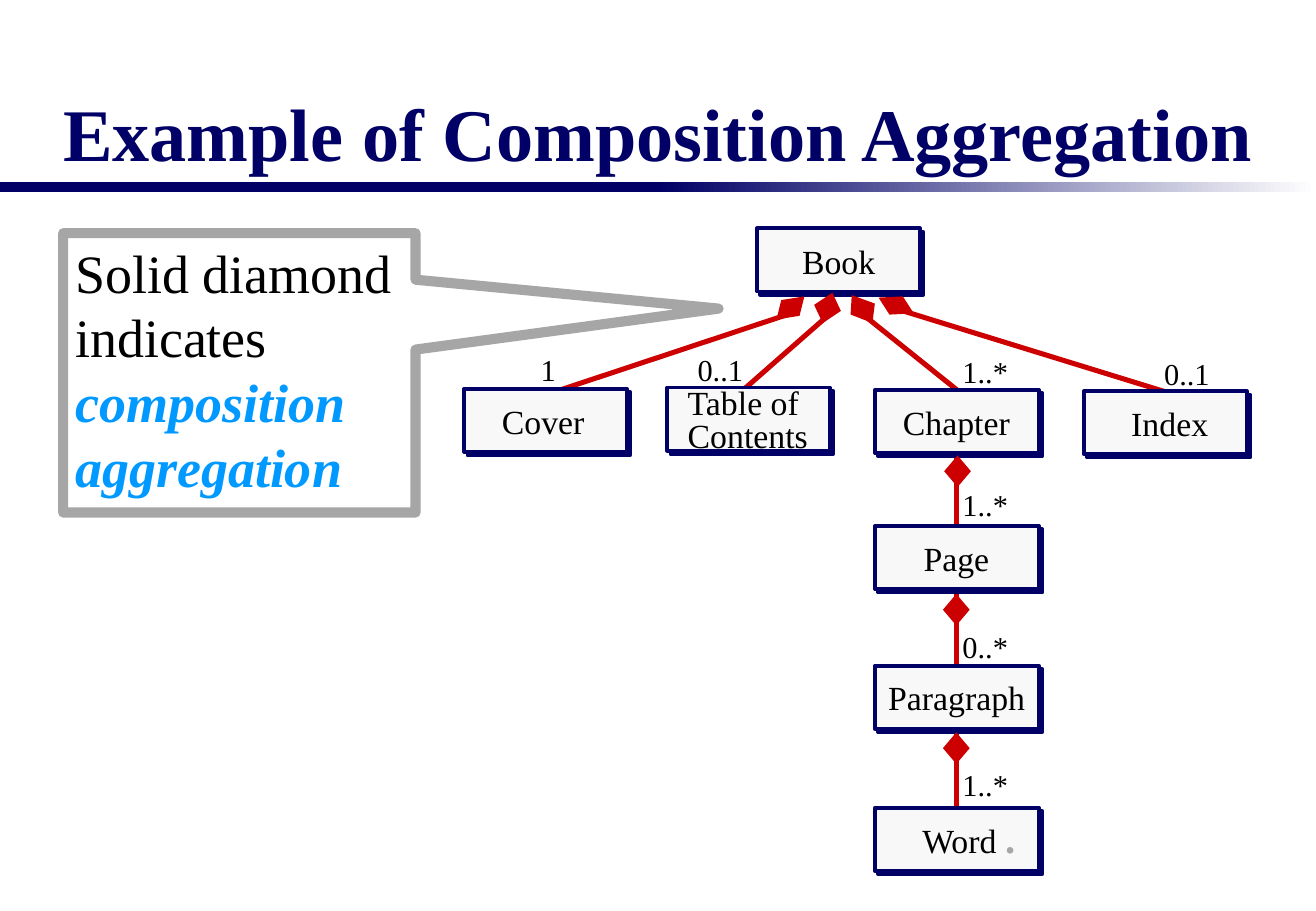
from lxml import etree
from pptx import Presentation, util as u
from pptx.dml.color import RGBColor
from pptx.enum import shapes, text
from pptx.oxml.ns import qn

PX = 9144  # 100 px to the inch
NAVY = RGBColor(0x00, 0x00, 0x66)
RED = RGBColor(0xCC, 0x00, 0x00)
PALE = RGBColor(0xF8, 0xF8, 0xF8)
GREY = RGBColor(0xA6, 0xA6, 0xA6)
SKY = RGBColor(0x00, 0x99, 0xFF)
WHITE = RGBColor(0xFF, 0xFF, 0xFF)
BLACK = RGBColor(0x00, 0x00, 0x00)
BOX_H = 52

prs = Presentation()
prs.slide_width, prs.slide_height = 1083 * PX, 750 * PX
s = prs.slides.add_slide(prs.slide_layouts[6])


def add_text(p, words, size=20, color=BLACK, bold=False, italic=False):
    r = p.add_run()
    r.text = words
    f = r.font
    f.name, f.size, f.bold, f.italic = "Times New Roman", u.Pt(size), bold, italic
    f.color.rgb = color


def add_frame(x, y, w, h):
    """Add an unwrapped text box without margins and return its first paragraph."""
    tf = s.shapes.add_textbox(x * PX, y * PX, w * PX, h * PX).text_frame
    tf.margin_left = tf.margin_right = tf.margin_top = tf.margin_bottom = 0
    tf.word_wrap = False
    return tf.paragraphs[0]


# Title and the rule below it
p = add_frame(52, 34, 990, 111)
p.alignment = text.PP_ALIGN.LEFT
add_text(p, "Example of Composition Aggregation", size=44, color=NAVY, bold=True)
s.shapes[-1].text_frame.vertical_anchor = text.MSO_ANCHOR.BOTTOM

for x in (0, 541):
    sp = s.shapes.add_shape(shapes.MSO_SHAPE.RECTANGLE, x * PX, 150 * PX, 542 * PX, 8 * PX)
    sp.shadow.inherit = False
    sp.line.fill.background()
    if x == 0:
        sp.fill.solid()
        sp.fill.fore_color.rgb = NAVY
    else:
        sp.fill.gradient()
        sp.fill.gradient_angle = 0
        for stop, position, color in zip(sp.fill.gradient_stops, (0, 1), (NAVY, WHITE)):
            stop.position, stop.color.rgb = position, color

# Callout
sp = s.shapes.add_shape(shapes.MSO_SHAPE.RECTANGULAR_CALLOUT, 52 * PX, 192 * PX, 290 * PX, 230 * PX)
sp.adjustments[0], sp.adjustments[1] = 1.36, -0.23
sp.shadow.inherit = False
sp.fill.background()
sp.line.color.rgb, sp.line.width = GREY, u.Pt(6)
tf = sp.text_frame
tf.word_wrap, tf.vertical_anchor = True, text.MSO_ANCHOR.TOP
p = tf.paragraphs[0]
p.alignment = text.PP_ALIGN.LEFT
add_text(p, "Solid diamond indicates ", size=32)
add_text(p, "composition aggregation", size=32, color=SKY, bold=True, italic=True)

# name: box (left, top, width), label (left, top, width)
classes = {
    "Book": ((623, 188, 134), (660, 198, 61)),
    "Cover": ((382, 320, 134), (413, 330, 69)),
    "Table of\vContents": ((549, 319, 134), (566, 321, 100)),
    "Chapter": ((720, 321, 135), (743, 331, 89)),
    "Index": ((892, 322, 134), (931, 332, 64)),
    "Page": ((720, 433, 135), (760, 443, 55)),
    "Paragraph": ((720, 548, 135), (731, 557, 114)),
    "Word": ((720, 665, 135), (759, 669, 77)),
}

# part, multiplicity and its place, line, diamond corners
links = [
    ("Cover", "1", (445, 289), (648, 259, 425, 333), [(662, 244), (643, 247), (639, 263), (658, 260)]),
    ("Table of\vContents", "0..1", (574, 289), (680, 261, 598, 333),
     [(685, 241), (670, 251), (677, 266), (692, 256)]),
    ("Chapter", "1..*", (792, 291), (714, 262, 787, 321), [(701, 243), (700, 259), (718, 266), (720, 250)]),
    ("Index", "0..1", (958, 292), (740, 255, 967, 325), [(723, 245), (732, 259), (752, 258), (743, 244)]),
]
# whole, part, multiplicity, its top, diamond tip
chain = [
    ("Chapter", "Page", "1..*", 400, (788, 375)),
    ("Page", "Paragraph", "0..*", 517, (787, 489)),
    ("Paragraph", "Word", "1..*", 631, (787, 603)),
]
joins = [(None, "Chapter")]
for whole, part, count, top, (x, y) in chain:
    corners = [(x, y), (x - 11, y + 13), (x, y + 26), (x + 11, y + 13)]
    links.append((part, count, (792, top), (787, y, 787, classes[part][0][1]), corners))
    joins.append((whole, part))

# Lines lie beneath the class boxes
lines = {}
for part, _, _, (x1, y1, x2, y2), _ in links:
    line = s.shapes.add_connector(shapes.MSO_CONNECTOR.STRAIGHT, x1 * PX, y1 * PX, x2 * PX, y2 * PX)
    line.line.color.rgb, line.line.width = RED, u.Pt(3)
    etree.SubElement(line._element.spPr, qn("a:effectLst"))
    lines[part] = line

boxes = {}
for name, ((x, y, w), (label_x, label_y, label_w)) in classes.items():
    sp = s.shapes.add_shape(shapes.MSO_SHAPE.RECTANGLE, x * PX, y * PX, w * PX, BOX_H * PX)
    sp.fill.solid()
    sp.fill.fore_color.rgb = PALE
    sp.line.color.rgb, sp.line.width = NAVY, u.Pt(2.25)
    effects = etree.SubElement(sp._element.spPr, qn("a:effectLst"))
    shadow = etree.SubElement(effects, qn("a:outerShdw"), dist=str(u.Pt(2.8)), dir="2700000",
                              algn="ctr", rotWithShape="0")
    etree.SubElement(shadow, qn("a:srgbClr"), val=str(NAVY))
    boxes[name] = sp

    p = add_frame(label_x, label_y, label_w, 34)
    if "\v" in name:
        p.line_spacing = 0.8
    if name == "Word":
        add_text(p, "Word ")
        add_text(p, ".", size=24, color=GREY, bold=True)
    else:
        first, *rest = name.split("\v")
        add_text(p, first)
        for row in rest:
            p.add_line_break()
            add_text(p, row)

for whole, part in joins:
    if whole:
        lines[part].begin_connect(boxes[whole], 2)
    lines[part].end_connect(boxes[part], 0)

for _, count, (x, y), _, corners in links:
    outline = s.shapes.build_freeform(*corners[0], scale=PX)
    outline.add_line_segments(corners[1:], close=True)
    diamond = outline.convert_to_shape()
    diamond.shadow.inherit = False
    diamond.fill.solid()
    diamond.fill.fore_color.rgb = RED
    diamond.line.fill.background()
    add_text(add_frame(x, y, 13 if count == "1" else 38, 30), count, size=18)

prs.save("out.pptx")
